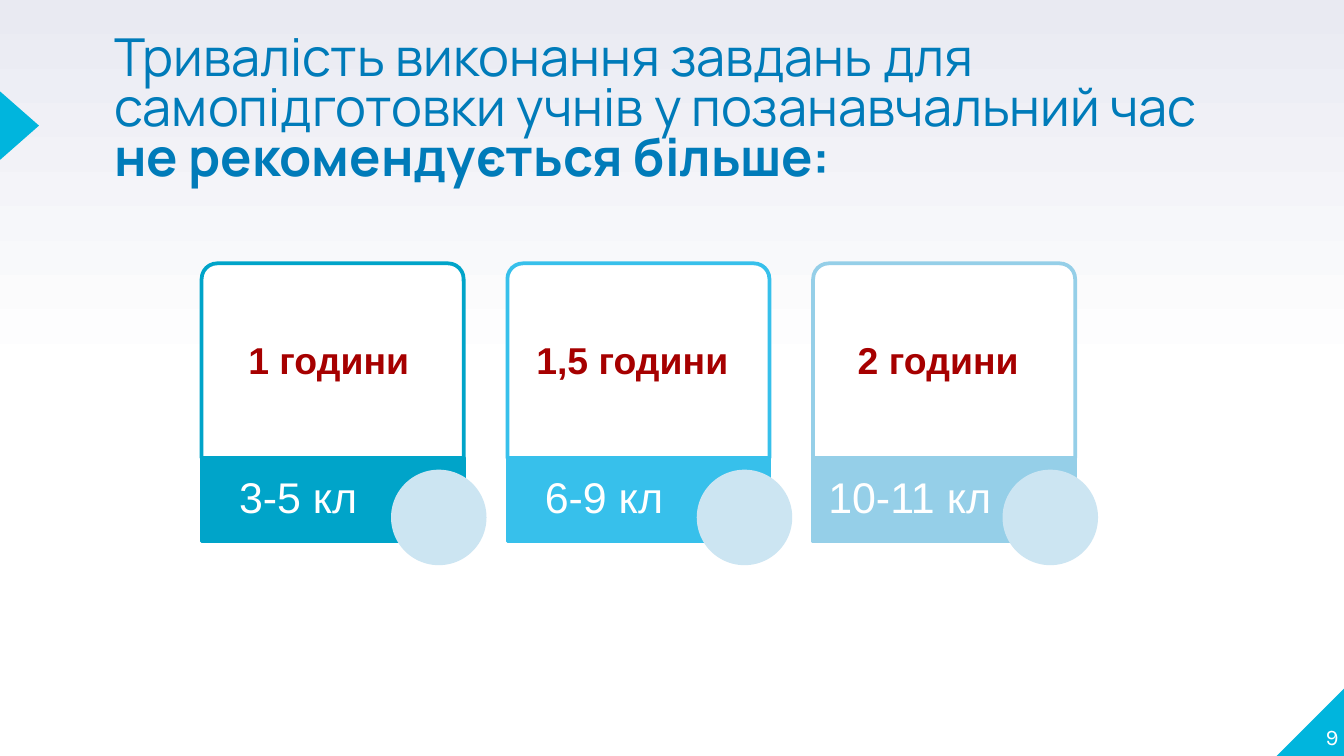
from pptx import Presentation
from pptx.dml.color import RGBColor
from pptx.enum.shapes import MSO_SHAPE as SHAPE
from pptx.enum.text import MSO_ANCHOR as ANCHOR, MSO_AUTO_SIZE as AUTO, PP_ALIGN as ALIGN
from pptx.util import Inches, Pt

COLORS = {
    "white": "FFFFFF", "haze": "E9EAF2", "accent": "00B5DD", "title": "007BB9",
    "grade_low": "00A4C9", "grade_mid": "37C0EB", "grade_high": "95CFE8",
    "dot": "CCE5F2", "hours": "A60000",
}
WIDTH = 10
HEIGHT = WIDTH * 9 / 16

# Hours, grades, colour, label offset and width as shares of the card, alignment
CARDS = [
    ("1 години", "3-5 кл", "grade_low", 0.07, 0.83, ALIGN.CENTER),
    ("1,5 години", "6-9 кл", "grade_mid", 0.06, 0.89, ALIGN.LEFT),
    ("2 години", "10-11 кл", "grade_high", 0.12, 0.76, ALIGN.LEFT),
]


def rgb(name):
    return RGBColor.from_string(COLORS[name])


def inches(box):
    return [Inches(v) for v in box]


def add_shape(s, kind, box, fill, line=None):
    sp = s.shapes.add_shape(kind, *inches(box))
    sp.shadow.inherit = False
    sp.fill.solid()
    sp.fill.fore_color.rgb = rgb(fill)
    if line:
        sp.line.color.rgb = rgb(line)
        sp.line.width = Pt(2)
    else:
        sp.line.fill.background()
    return sp


def write(sp, runs, size, color, font="Arial", align=ALIGN.LEFT, anchor=ANCHOR.TOP,
          spacing=None, margins=(0, 0, 0, 0), auto=AUTO.NONE):
    """Fill a shape with one paragraph; runs are (text, bold) pairs, one per line."""
    tf = sp.text_frame
    tf.word_wrap = True
    tf.auto_size = auto
    tf.vertical_anchor = anchor
    tf.margin_left, tf.margin_top, tf.margin_right, tf.margin_bottom = inches(margins)
    p = tf.paragraphs[0]
    p.alignment = align
    if spacing:
        p.line_spacing = spacing
    for i, (text, bold) in enumerate(runs):
        if i:
            p.add_line_break()
        r = p.add_run()
        r.text = text
        r.font.name, r.font.size, r.font.bold = font, Pt(size), bold
        r.font.color.rgb = rgb(color)


def add_background(s):
    fill = s.background.fill
    fill.gradient()
    fill.gradient_angle = 90
    for stop, color, position in zip(fill.gradient_stops, ("white", "haze"), (0.5, 1)):
        stop.color.rgb = rgb(color)
        stop.position = position


def add_decor(s):
    side = 0.51
    # Folded corner, bottom right
    corner = add_shape(s, SHAPE.RIGHT_TRIANGLE,
                       (WIDTH - side + 0.01, HEIGHT - side, side, side), "accent")
    corner._element.spPr.xfrm.set("flipH", "1")
    # Pointer at the left edge, turned to the right
    pointer = add_shape(s, SHAPE.ISOSCELES_TRIANGLE, (-0.11, 0.79, side, 0.29), "accent")
    pointer.rotation = 90


def add_title(s, box):
    title = s.shapes.title
    title.left, title.top, title.width, title.height = inches(box)
    write(title, [("Тривалість виконання завдань для самопідготовки учнів у позанавчальний час ", False),
                  ("не рекомендується більше:", True)],
          28, "title", font="Manrope", spacing=0.8)


def add_card(s, box, hours, grades, color, label_x, label_w, align):
    x, y, w, h = box
    frame_h = 0.7 * h
    band_y, band_h = y + frame_h, h - frame_h
    # Frame with rounded top corners
    frame = add_shape(s, SHAPE.ROUND_2_SAME_RECTANGLE, (x, y, w, frame_h), "white", line=color)
    frame.adjustments[0], frame.adjustments[1] = 0.08, 0
    # Coloured band with the grades
    band = add_shape(s, SHAPE.RECTANGLE, (x, band_y, w, band_h), color, line=color)
    write(band, [(grades, False)], 23, "white", align=ALIGN.CENTER, anchor=ANCHOR.MIDDLE,
          spacing=0.9, margins=(0.1, 0, 0.61, 0))
    # Dot over the lower right corner
    dot = 0.35 * w
    add_shape(s, SHAPE.OVAL, (x + 0.73 * w, band_y + 0.1, dot, dot), "dot", line="dot")
    # Hours
    label = s.shapes.add_textbox(*inches((x + label_x * w, y + 0.5, label_w * w, 0.44)))
    write(label, [(hours, True)], 20, "hours", align=align,
          margins=(0.1, 0.05, 0.1, 0.05), auto=AUTO.SHAPE_TO_FIT_TEXT)


def add_cards(s, box):
    x, y, w, h = box
    card_w = 0.3 * w
    pitch = (w - card_w) / (len(CARDS) - 1)
    for i, card in enumerate(CARDS):
        add_card(s, (x + i * pitch, y, card_w, h), *card)


def add_page_number(s, box):
    number = s.shapes.add_textbox(*inches(box))
    write(number, [("9", False)], 12, "white", font="Karla",
          align=ALIGN.RIGHT, anchor=ANCHOR.BOTTOM)


def main():
    prs = Presentation()
    prs.slide_width, prs.slide_height = Inches(WIDTH), Inches(HEIGHT)
    s = prs.slides.add_slide(prs.slide_layouts[5])
    add_background(s)
    add_decor(s)
    add_title(s, (0.85, 0.27, 9.11, 1.18))
    add_cards(s, (1.5, 1.96, 6.5, 2.07))
    add_page_number(s, (9.46, 5.07, 0.5, 0.51))
    prs.save("out.pptx")


if __name__ == "__main__":
    main()
